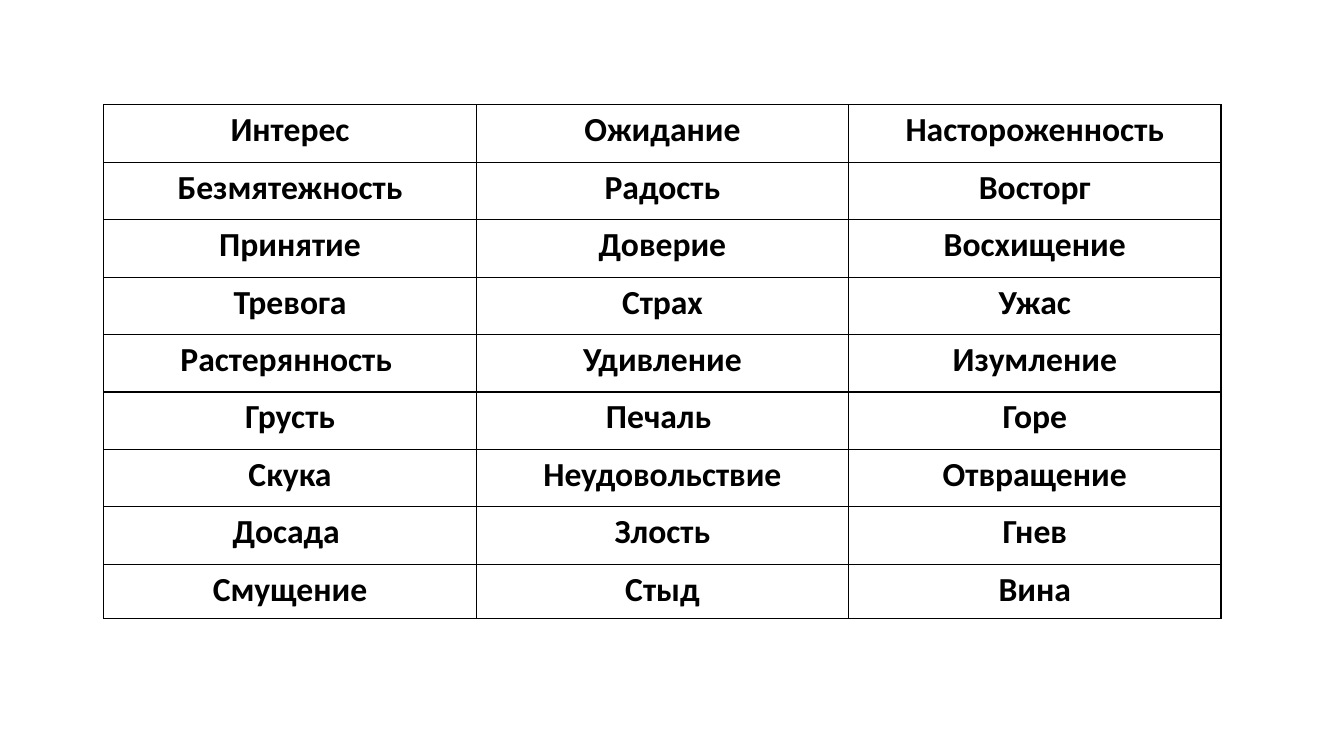
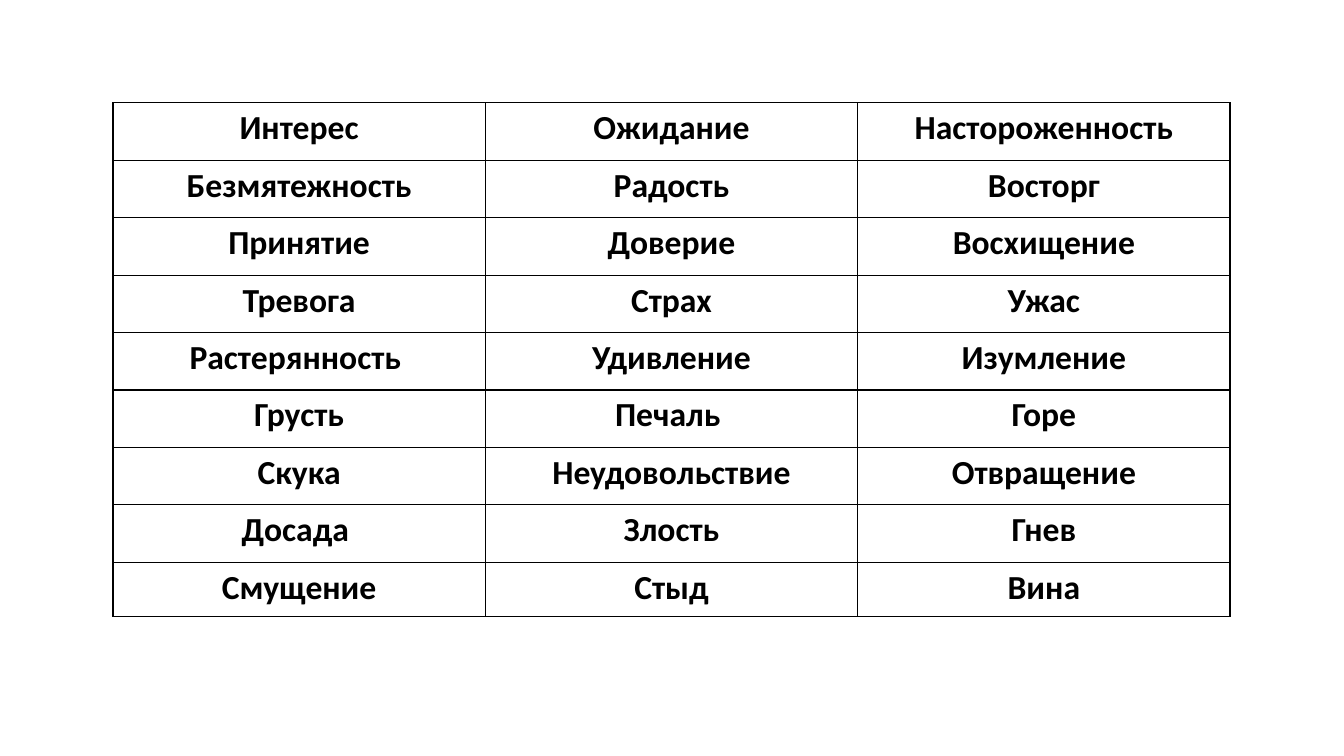
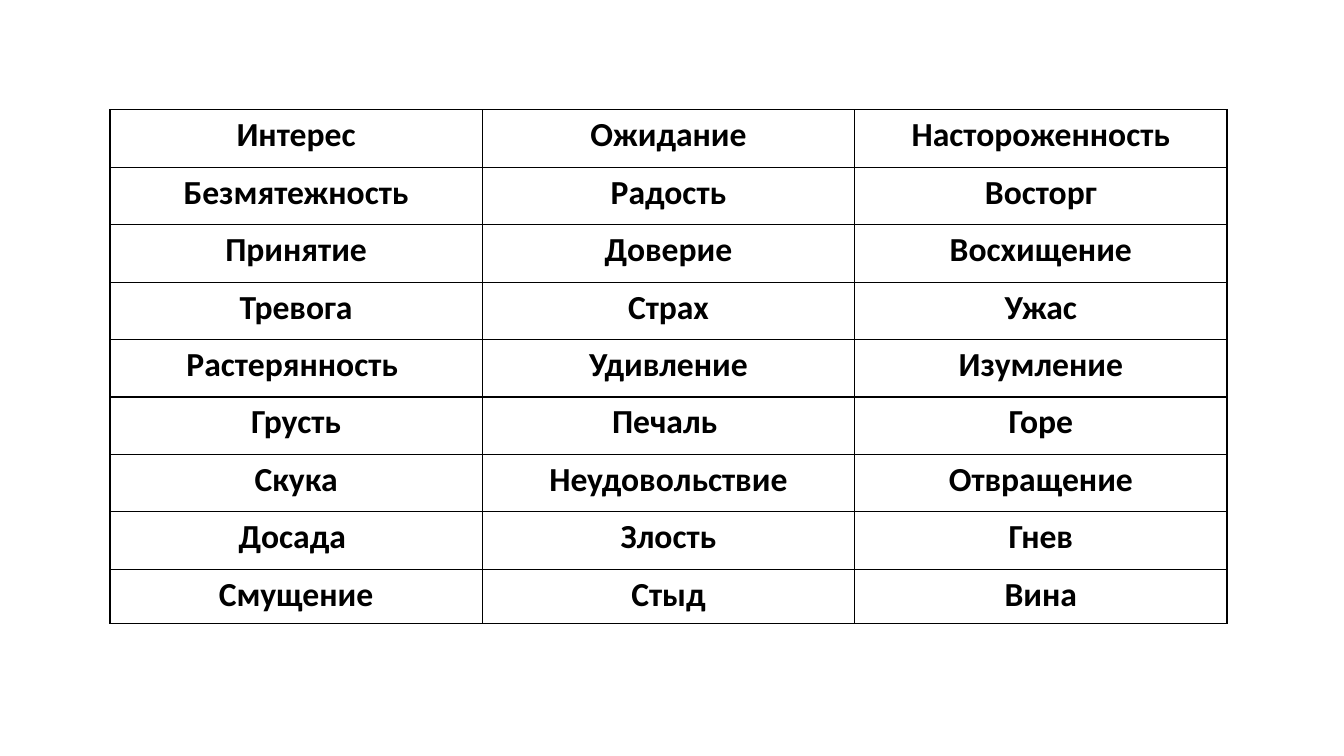
from lxml.etree import SubElement
from pptx import Presentation
from pptx.dml.color import RGBColor
from pptx.enum.text import PP_ALIGN
from pptx.oxml.ns import qn
from pptx.util import Inches, Pt

ROWS = [
    ("Интерес", "Ожидание", "Настороженность"),
    ("Безмятежность", "Радость", "Восторг"),
    ("Принятие", "Доверие", "Восхищение"),
    ("Тревога", "Страх", "Ужас"),
    ("Растерянность ", "Удивление", "Изумление"),
    ("Грусть", "Печаль ", "Горе"),
    ("Скука", "Неудовольствие", "Отвращение"),
    ("Досада ", "Злость", "Гнев"),
    ("Смущение", "Стыд", "Вина"),
]
SPOTS = [(1.03, 1.04), (1.12, 1.02), (1.09, 1.09)]

BLACK = RGBColor(0, 0, 0)
WHITE = RGBColor(255, 255, 255)
FONT = {"name": "Calibri", "size": Pt(24), "bold": True}
FLAGS = {"first_row": False, "horz_banding": False}
EDGE = Pt(1)
WIDTH = Inches(11.08)
ROW = Inches(0.57)
LAST = Inches(0.54)


def assign(item, values):
    for key, value in values.items():
        setattr(item, key, value)


def outline(cell):
    props = cell._tc.get_or_add_tcPr()
    for side in ("lnL", "lnR", "lnT", "lnB"):
        line = SubElement(props, qn("a:" + side), w=str(EDGE))
        fill = SubElement(line, qn("a:solidFill"))
        SubElement(fill, qn("a:srgbClr"), val=str(BLACK))


def write(cell, text):
    outline(cell)
    cell.fill.solid()
    cell.fill.fore_color.rgb = WHITE
    para = cell.text_frame.paragraphs[0]
    para.alignment = PP_ALIGN.CENTER
    run = para.add_run()
    run.text = text
    assign(run.font, FONT)
    run.font.color.rgb = BLACK


def add_grid(slide, left, top):
    high = ROW * (len(ROWS) - 1) + LAST
    frame = slide.shapes.add_table(
        len(ROWS), len(ROWS[0]), Inches(left), Inches(top), WIDTH, high)
    table = frame.table
    assign(table, FLAGS)
    for row in table.rows:
        row.height = ROW
    table.rows[len(ROWS) - 1].height = LAST
    for r, words in enumerate(ROWS):
        for c, word in enumerate(words):
            write(table.cell(r, c), word)


def main():
    deck = Presentation()
    assign(deck, {"slide_width": Inches(13.33), "slide_height": Inches(7.5)})
    for left, top in SPOTS:
        add_grid(deck.slides.add_slide(deck.slide_layouts[6]), left, top)
    deck.save("out.pptx")


if __name__ == "__main__":
    main()
